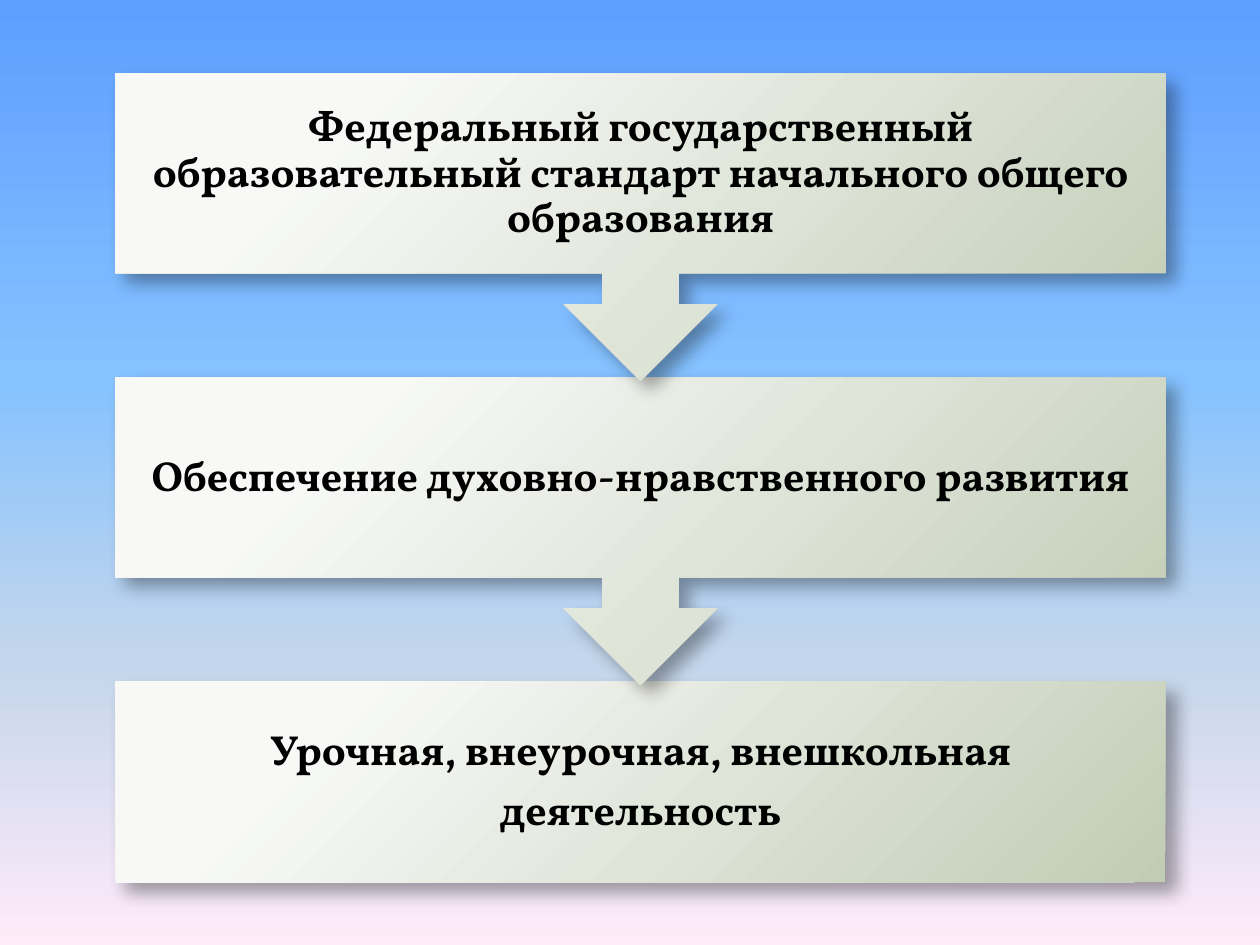
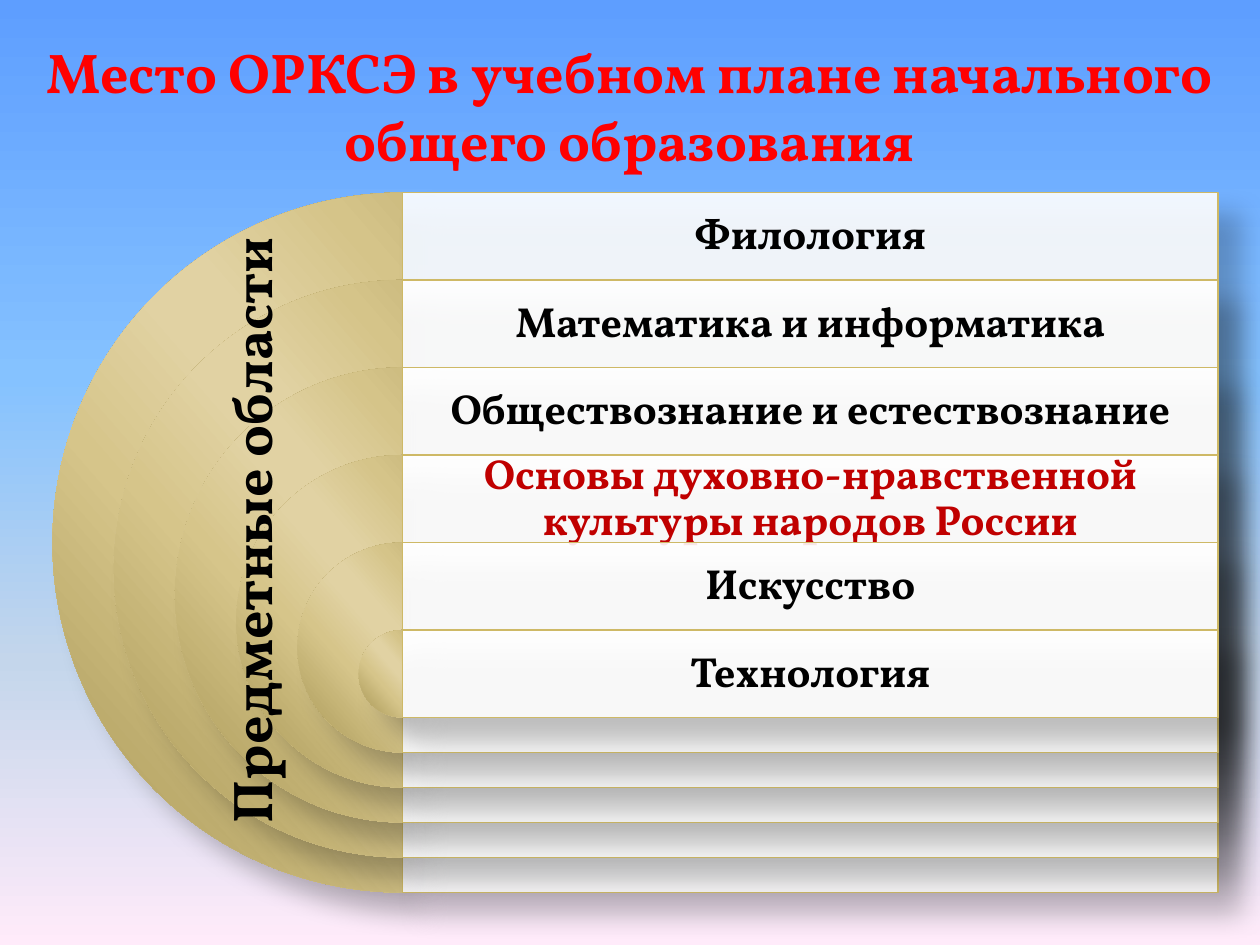
from dataclasses import dataclass

from lxml import etree
from pptx import Presentation
from pptx.dml.color import RGBColor
from pptx.enum import shapes, text
from pptx.oxml import ns
from pptx.util import Pt

STAGES = [
    ["Федеральный государственный образовательный стандарт начального общего образования"],
    ["Обеспечение духовно-нравственного развития"],
    ["Урочная, внеурочная, внешкольная", "деятельность"],
]
PLAN_TITLE = "Место ОРКСЭ в учебном плане начального общего образования"
AREAS_LABEL = "Предметные области"
HIGHLIGHTED_AREA = "Основы духовно-нравственной культуры народов России"
AREAS = [
    "Филология",
    "Математика и информатика",
    "Обществознание и естествознание",
    HIGHLIGHTED_AREA,
    "Искусство",
    "Технология",
]


@dataclass(frozen=True)
class Theme:
    font: str = "Vollkorn"
    heading_size: int = 32
    body_size: int = 24
    ink: str = "000000"
    title: str = "FF0000"
    highlight: str = "C00000"
    panel: str = "FFFFFF"
    panel_opacity: int = 90
    panel_line: str = "CEB966"
    sky: tuple = ((0, "5E9EFF"), (40, "85C2FF"), (70, "C4D6EB"), (100, "FFEBFA"))
    sage: tuple = ((20, "F8F9F7"), (100, "C1CCB5"))
    gold: tuple = ((0, "A59452"), (33, "D5C489"), (47, "E1D2A3"),
                   (53, "E1D2A3"), (68, "D6C58A"), (100, "A59452"))
    stage_shadow: tuple = (35, 10.2, 8)
    disc_shadow: tuple = (26, 15, 18)


THEME = Theme()


def add_node(parent, tag, **attributes):
    return etree.SubElement(parent, ns.qn(tag), {k: str(v) for k, v in attributes.items()})


def paint_gradient(host, stops, angle=None):
    gradient = etree.Element(ns.qn("a:gradFill"), {"rotWithShape": "1"})
    stop_list = add_node(gradient, "a:gsLst")
    for position, color in stops:
        stop = add_node(stop_list, "a:gs", pos=position * 1000)
        add_node(stop, "a:srgbClr", val=color)
    if angle is None:
        circle = add_node(gradient, "a:path", path="circle")
        add_node(circle, "a:fillToRect", l=-15000, t=-15000, r=115000, b=115000)
    else:
        add_node(gradient, "a:lin", ang=angle * 60000, scaled=0)
    host.replace(host.find(ns.qn("a:solidFill")), gradient)


def cast_shadow(shape, opacity, blur, distance):
    shape.shadow.inherit = False
    effects = shape.element.spPr.find(ns.qn("a:effectLst"))
    shadow = add_node(effects, "a:outerShdw", blurRad=int(Pt(blur)), dist=int(Pt(distance)),
                      dir=45 * 60000, algn="tl", rotWithShape=0)
    color = add_node(shadow, "a:srgbClr", val=THEME.ink)
    add_node(color, "a:alpha", val=opacity * 1000)


def add_figure(slide, kind, box, shadow):
    figure = slide.shapes.add_shape(kind, *map(Pt, box))
    figure.fill.solid()
    figure.fill.fore_color.rgb = RGBColor.from_string(THEME.panel)
    figure.line.fill.background()
    cast_shadow(figure, *shadow)
    return figure


def write(frame, paragraphs, size, color, inset=None, dense=False):
    frame.word_wrap = True
    frame.text = "\n".join(paragraphs)
    if inset is not None:
        frame.margin_left = frame.margin_right = Pt(inset)
        frame.margin_top = frame.margin_bottom = Pt(inset)
    for paragraph in frame.paragraphs:
        paragraph.alignment = text.PP_ALIGN.CENTER
        if dense:
            paragraph.line_spacing = 0.9
            paragraph.space_after = Pt(0.35 * size)
        font = paragraph.runs[0].font
        font.name, font.size, font.bold = THEME.font, Pt(size), True
        font.color.rgb = RGBColor.from_string(color)


def add_sky_slide(deck, layout):
    slide = deck.slides.add_slide(deck.slide_layouts[layout])
    slide.background.fill.solid()
    paint_gradient(slide.element.find(".//" + ns.qn("p:bgPr")), THEME.sky, 90)
    return slide


def build_stages(deck):
    slide = add_sky_slide(deck, 6)
    left, first_top, width, pitch = 66, 42, 600, 173.8
    box_height, callout_height = 114.5, 175.7
    for i, stage in reversed(list(enumerate(STAGES))):
        is_last = i == len(STAGES) - 1
        kind = shapes.MSO_SHAPE.RECTANGLE if is_last else shapes.MSO_SHAPE.DOWN_ARROW_CALLOUT
        height = box_height if is_last else callout_height
        step = add_figure(slide, kind, (left, first_top + i * pitch, width, height),
                          THEME.stage_shadow)
        paint_gradient(step.element.spPr, THEME.sage)
        step.text_frame.vertical_anchor = text.MSO_ANCHOR.MIDDLE
        write(step.text_frame, stage, THEME.body_size, THEME.ink, 13.7, dense=True)


def build_plan(deck):
    slide = add_sky_slide(deck, 5)
    title = slide.shapes.title
    title.left, title.top, title.width, title.height = map(Pt, (0, 18, 720, 85))
    title.text_frame.auto_size = text.MSO_AUTO_SIZE.SHAPE_TO_FIT_TEXT
    title.text_frame.vertical_anchor = text.MSO_ANCHOR.TOP
    write(title.text_frame, [PLAN_TITLE], THEME.heading_size, THEME.title)

    axis, first_top, panel_width, row = 230, 110, 466, 50
    outer, shrink = 400, 70
    for i, area in enumerate(AREAS):
        size, top = outer - i * shrink, first_top + i * row
        disc = add_figure(slide, shapes.MSO_SHAPE.PIE, (axis - size / 2, top, size, size),
                          THEME.disc_shadow)
        disc.adjustments[0], disc.adjustments[1] = 54, 162
        paint_gradient(disc.element.spPr, THEME.gold, 139)

        panel = add_figure(slide, shapes.MSO_SHAPE.RECTANGLE, (axis, top, panel_width, size),
                           THEME.disc_shadow)
        panel_color = panel.element.spPr.find(ns.qn("a:solidFill"))[0]
        add_node(panel_color, "a:alpha", val=THEME.panel_opacity * 1000)
        panel.line.color.rgb = RGBColor.from_string(THEME.panel_line)
        panel.line.width = Pt(0.75)

        label = slide.shapes.add_textbox(*map(Pt, (axis, top, panel_width, row))).text_frame
        label.vertical_anchor = text.MSO_ANCHOR.MIDDLE
        color = THEME.highlight if area == HIGHLIGHTED_AREA else THEME.ink
        write(label, [area], THEME.body_size, color, 7.2, dense=True)

    side = slide.shapes.add_textbox(*map(Pt, (120, 120, 53, 366)))
    side.text_frame._txBody.bodyPr.set("vert", "vert270")
    write(side.text_frame, [AREAS_LABEL], THEME.heading_size, THEME.ink)


def main():
    deck = Presentation()
    deck.slide_width, deck.slide_height = Pt(720), Pt(540)
    build_stages(deck)
    build_plan(deck)
    deck.save("out.pptx")


if __name__ == "__main__":
    main()
